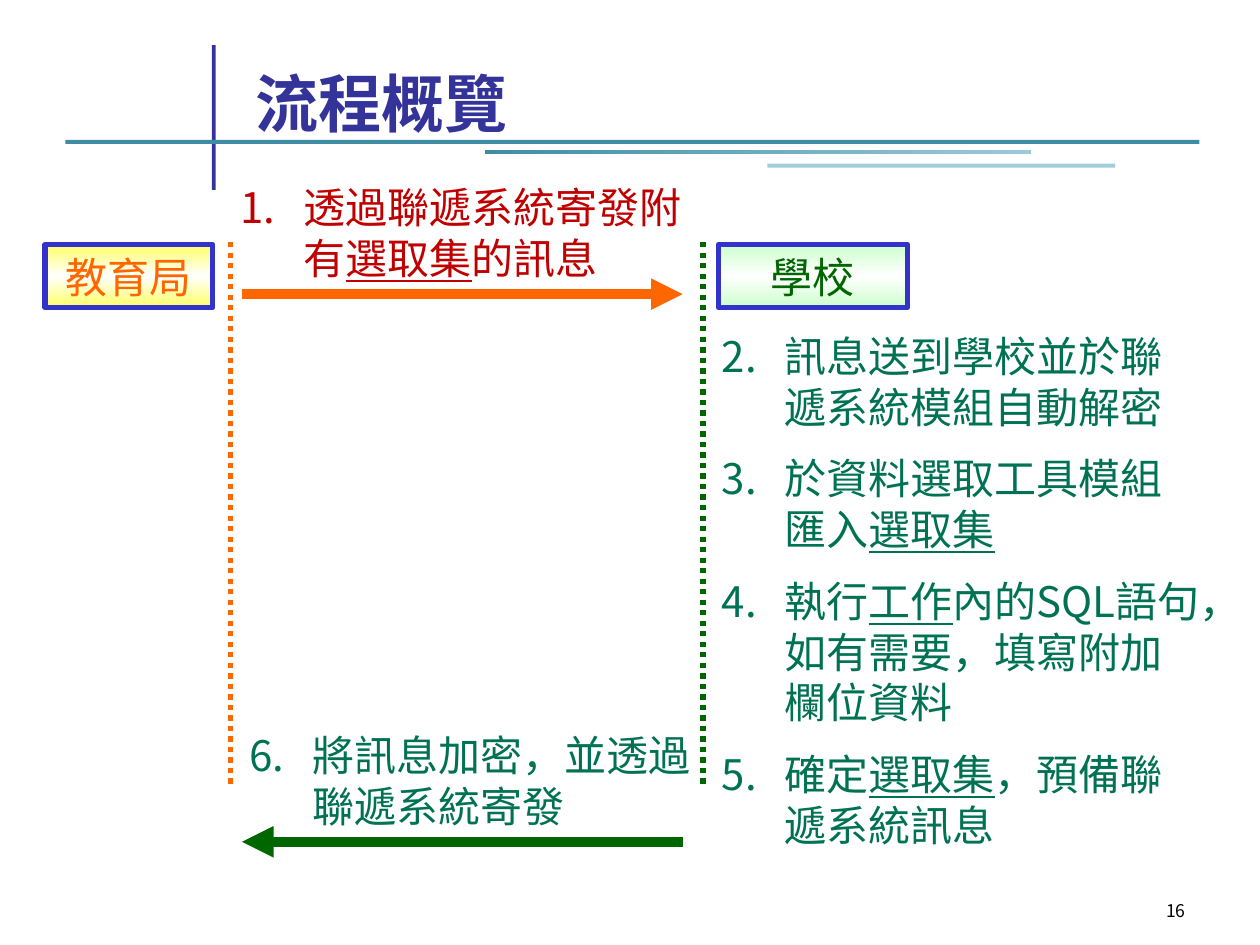
import pptx
import pptx.util
import pptx.dml.color
import pptx.enum.dml
import pptx.enum.shapes
import pptx.enum.text
import pptx.oxml.ns
import pptx.oxml.xmlchemy

Cm = pptx.util.Cm
Pt = pptx.util.Pt
RGBColor = pptx.dml.color.RGBColor
Align = pptx.enum.text.PP_ALIGN
Anchor = pptx.enum.text.MSO_ANCHOR
RECTANGLE = pptx.enum.shapes.MSO_SHAPE.RECTANGLE

FONT = "Noto Sans CJK SC"
NAVY = RGBColor(0x33, 0x33, 0x99)
TEAL = RGBColor(0x3F, 0x8D, 0xA5)
PALE_TEAL = RGBColor(0x9B, 0xCA, 0xD9)
LIGHT_TEAL = RGBColor(0xA1, 0xCD, 0xDB)
BLUE = RGBColor(0x33, 0x33, 0xCC)
YELLOW = RGBColor(0xFF, 0xFF, 0x66)
MINT = RGBColor(0xCC, 0xFF, 0xCC)
WHITE = RGBColor(0xFF, 0xFF, 0xFF)
BLACK = RGBColor(0, 0, 0)
ORANGE = RGBColor(0xFF, 0x66, 0x00)
GREEN = RGBColor(0x00, 0x66, 0x00)
RED = RGBColor(0xC0, 0x00, 0x00)
JADE = RGBColor(0x00, 0x72, 0x54)


def add_element(parent, tag, **attributes):
    child = pptx.oxml.xmlchemy.OxmlElement(tag)
    for name, value in attributes.items():
        child.set(name, str(value))
    parent.append(child)
    return child


def set_values(target, values):
    for name, value in values.items():
        setattr(target, name, value)


def fill_shape(shape, colors, angle=0):
    """Fill with one colour, or with an even gradient over several."""
    if len(colors) == 1:
        shape.fill.solid()
        shape.fill.fore_color.rgb = colors[0]
        return
    shape.fill.gradient()
    gradient = shape._element.spPr.find(pptx.oxml.ns.qn("a:gradFill"))
    for child in list(gradient):
        gradient.remove(child)
    stops = add_element(gradient, "a:gsLst")
    for index, color in enumerate(colors):
        stop = add_element(stops, "a:gs", pos=index * 100000 // (len(colors) - 1))
        add_element(stop, "a:srgbClr", val=color)
    add_element(gradient, "a:lin", ang=angle * 60000, scaled=0)


def add_rectangle(page, place, colors, angle=0):
    box = page.shapes.add_shape(RECTANGLE, *map(Cm, place))
    box.shadow.inherit = False
    fill_shape(box, colors, angle)
    box.line.fill.background()
    return box


def add_span(para, text, color, size, **font_values):
    span = para.add_run()
    span.text = text
    set_values(span.font, {"name": FONT, "size": Pt(size), **font_values})
    span.font.color.rgb = color
    add_element(span._r.get_or_add_rPr(), "a:ea", typeface=FONT)


def add_label(box, text, color, size, frame_values, para_values, **font_values):
    frame = box.text_frame
    set_values(frame, {"word_wrap": True, **frame_values})
    para = frame.paragraphs[0]
    set_values(para, para_values)
    add_span(para, text, color, size, **font_values)


def add_party(page, place, edge_color, text, color):
    box = add_rectangle(page, place, [edge_color, WHITE, edge_color], 90)
    box.line.color.rgb = BLUE
    box.line.width = Pt(3)
    add_label(box, text, color, 24, {"vertical_anchor": Anchor.MIDDLE},
              {"alignment": Align.CENTER, "line_spacing": Pt(29)})


def add_steps(page, place, start, color, steps):
    """Add numbered steps; every second span of a step is underlined."""
    box = page.shapes.add_textbox(*map(Cm, place))
    frame = box.text_frame
    frame.word_wrap = True
    for index, step in enumerate(steps):
        para = frame.add_paragraph() if index else frame.paragraphs[0]
        para.line_spacing = Pt(29)
        if index:
            para.space_before = Pt(12)
        properties = para._p.get_or_add_pPr()
        properties.set("marL", str(Cm(1.27)))
        properties.set("indent", str(Cm(-1.27)))
        add_element(properties, "a:buFont", typeface=FONT)
        add_element(properties, "a:buAutoNum", type="arabicPeriod", startAt=start)
        for position, text in enumerate(step):
            add_span(para, text, color, 24, underline=position % 2 == 1)


def add_line(page, ends, color, width):
    line = page.shapes.add_connector(
        pptx.enum.shapes.MSO_CONNECTOR.STRAIGHT, *map(Cm, ends))
    line.line.color.rgb = color
    line.line.width = Pt(width)
    add_element(line._element.spPr, "a:effectLst")
    return line


def add_arrow(page, start, end, y, color):
    arrow = add_line(page, (start, y, end, y), color, 6)
    add_element(arrow._element.spPr.get_or_add_ln(), "a:tailEnd", type="triangle")


def add_lifeline(page, x, color):
    line = add_line(page, (x, 4.88, x, 15.88), color, 3)
    line.line.dash_style = pptx.enum.dml.MSO_LINE.ROUND_DOT


def add_heading(page):
    for place, colors in (
        ((4.27, 0.91, 0.08, 2.92), [NAVY]),
        ((1.32, 2.82, 22.86, 0.08), [TEAL]),
        ((9.78, 3.02, 11, 0.08), [TEAL, PALE_TEAL]),
        ((15.47, 3.3, 7.01, 0.08), [LIGHT_TEAL]),
    ):
        add_rectangle(page, place, colors)
    box = page.shapes.add_textbox(*map(Cm, (4.9, 0.71, 19.89, 2.11)))
    add_label(box, "流程概覽", NAVY, 36,
              {"vertical_anchor": Anchor.BOTTOM, "margin_bottom": 0},
              {"line_spacing": Pt(43)}, bold=True)


def add_page_number(page):
    box = page.shapes.add_textbox(*map(Cm, (18.87, 17.42, 5.28, 1.27)))
    add_label(box, "16", BLACK, 10, {"vertical_anchor": Anchor.BOTTOM},
              {"alignment": Align.RIGHT})


def main():
    deck = pptx.Presentation()
    deck.slide_width, deck.slide_height = Cm(25.4), Cm(19.05)
    page = deck.slides.add_slide(deck.slide_layouts[6])

    add_heading(page)
    add_party(page, (0.91, 4.93, 3.38, 1.27), YELLOW, "教育局", ORANGE)
    add_party(page, (14.48, 4.93, 3.81, 1.27), MINT, "學校", GREEN)
    add_arrow(page, 4.88, 13.76, 5.93, ORANGE)
    add_arrow(page, 13.76, 4.88, 16.97, GREEN)
    add_steps(page, (4.6, 3.53, 9.65, 2.31), 1, RED, [
        ["透過聯遞系統寄發附有", "選取集", "的訊息"],
    ])
    add_steps(page, (14.3, 6.53, 10.16, 11.02), 2, JADE, [
        ["訊息送到學校並於聯遞系統模組自動解密"],
        ["於資料選取工具模組匯入", "選取集"],
        ["執行", "工作", "內的SQL語句，如有需要，填寫附加欄位資料"],
        ["確定", "選取集", "，預備聯遞系統訊息"],
    ])
    add_steps(page, (4.78, 14.58, 9.45, 2.31), 6, JADE, [
        ["將訊息加密，並透過聯遞系統寄發"],
    ])
    add_lifeline(page, 4.65, ORANGE)
    add_lifeline(page, 14.17, GREEN)
    add_page_number(page)
    deck.save("out.pptx")


if __name__ == "__main__":
    main()
